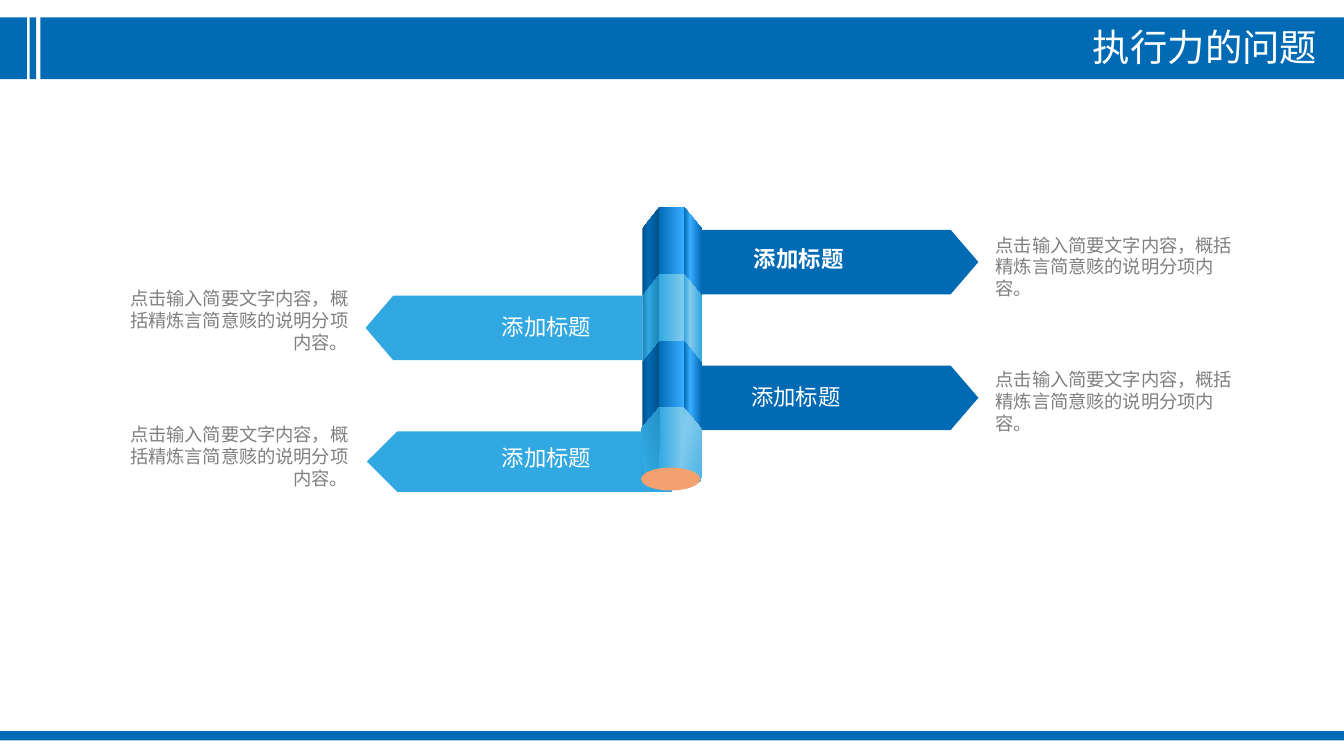
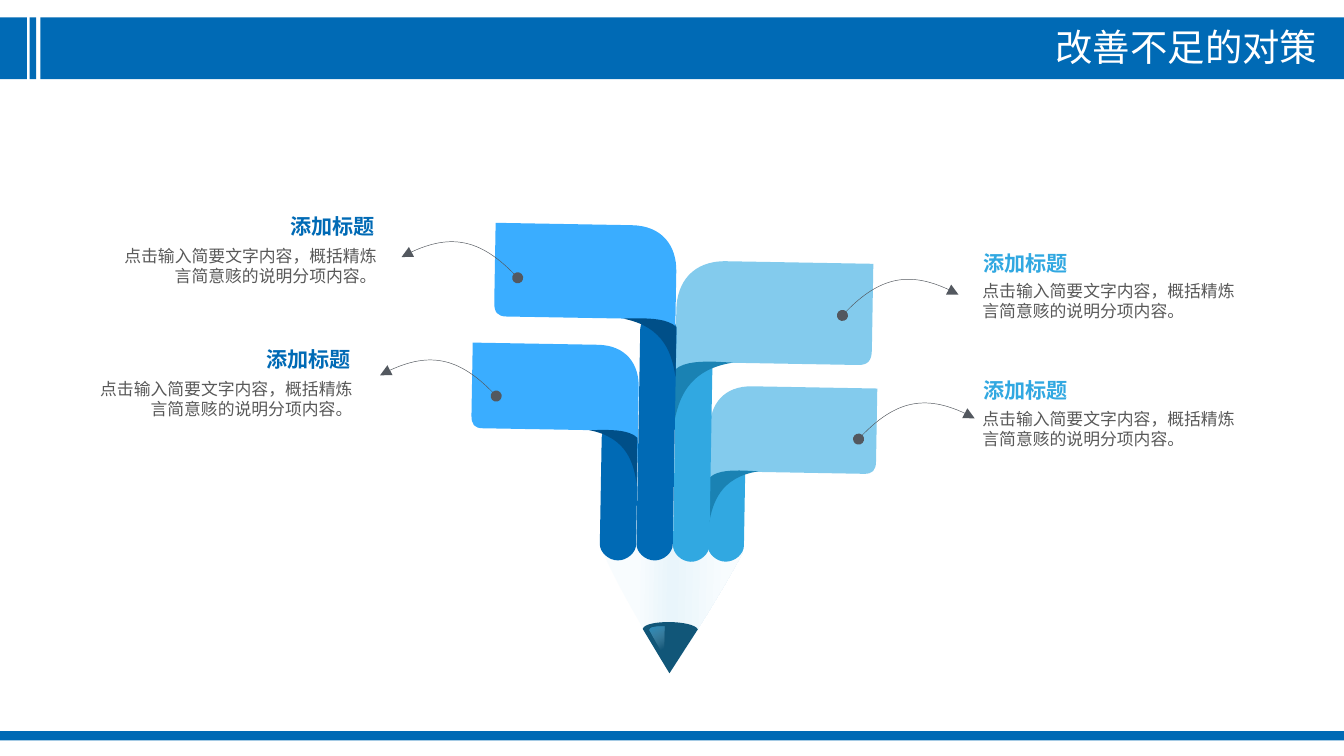
from dataclasses import dataclass

from lxml import etree
from pptx import Presentation
from pptx.dml.color import RGBColor
from pptx.enum.shapes import MSO_SHAPE
from pptx.enum.text import MSO_ANCHOR, MSO_AUTO_SIZE, PP_ALIGN
from pptx.oxml.ns import qn
from pptx.util import Inches, Pt

RECTANGLE, OVAL = MSO_SHAPE.RECTANGLE, MSO_SHAPE.OVAL
LEFT, RIGHT = PP_ALIGN.LEFT, PP_ALIGN.RIGHT
TOP, MIDDLE = MSO_ANCHOR.TOP, MSO_ANCHOR.MIDDLE
FIT_TEXT, FIXED = MSO_AUTO_SIZE.SHAPE_TO_FIT_TEXT, MSO_AUTO_SIZE.NONE


@dataclass(frozen=True)
class Theme:
    font: str = "Arial"
    white: str = "FFFFFF"
    navy: str = "004F88"
    blue: str = "006AB5"
    bright: str = "3AADFF"
    teal: str = "1A82B3"
    sky: str = "31A8E1"
    pale: str = "83CBED"
    wood: str = "F2A16F"
    lead: str = "115678"
    paper: str = "F8FCFE"
    paper_shade: str = "E9F5FB"
    glint: str = "D6EEF9"
    grey: str = "808080"
    dark_grey: str = "595959"
    pointer: str = "53585F"
    title_size: float = 20
    banner_size: float = 12
    heading_size: float = 11.25
    note_size: float = 9.75
    detail_size: float = 9


THEME = Theme()
HEADING = "添加标题"
DETAIL = "点击输入简要文字内容，概括精炼言简意赅的说明分项内容。"
NARROW = (0.07, 0.04, 0.07, 0.04)
NO_INSETS = (0, 0, 0, 0)

BANNER = "M 0 0 L 90 0 L 100 50 L 90 100 L 0 100 Z"
PILLAR_FACE = "M 0 0 L 100 0 L 100 100 L 0 100 Z"
PILLAR_SIDE = "M 100 0 L 100 75 L 0 100 L 0 24 Z"
PILLAR_FOOT = "M 100 0 L 46 94 C 40 97 32 99 24 100 C 13 100 8 97 0 94 L 39 22 Z"
PILLAR_RIM = "M 0 0 L 100 0 C 84 60 66 100 50 100 C 34 100 16 60 0 0 Z"
PENCIL_CONE = "M 100 10 C 83 46 50 100 50 100 C 50 100 13 42 0 9 C 0 9 66 -12 100 10 Z"
PENCIL_LEAD = "M 0 14 C 27 61 50 100 50 100 C 50 100 71 63 100 13 C 92 -5 4 -5 0 14 Z"
PENCIL_GLINT = "M 100 100 C 100 100 55 64 0 14 C 0 0 55 0 100 0 Z"
FLAG = ("M 25 0 C 8 0 0 16 0 36 L 0 100 C 2 91 12 74 29 74 "
        "L 93 74 C 98 74 100 71 100 63 L 100 0 Z")
FOLD = "M 0 14 L 0 100 C 7 64 20 14 100 1 L 69 0 C 48 0 16 0 0 14 Z"
POINTER = "M 0 0 C 58 4 90 36 100 100"


def inches(box):
    return [Inches(length) for length in box]


def paint(shape, fill, angle=0):
    shape.shadow.inherit = False
    shape.line.fill.background()
    if fill is None:
        shape.fill.background()
    elif isinstance(fill, str):
        shape.fill.solid()
        shape.fill.fore_color.rgb = RGBColor.from_string(fill)
    else:
        shape.fill.gradient()
        shape.fill.gradient_angle = -angle % 360
        stops = shape.element.spPr.find(qn("a:gradFill")).find(qn("a:gsLst"))
        for stop in list(stops):
            stops.remove(stop)
        for position, color, *alpha in fill:
            stop = etree.SubElement(stops, qn("a:gs"), pos=str(position * 1000))
            tint = etree.SubElement(stop, qn("a:srgbClr"), val=color)
            for percent in alpha:
                etree.SubElement(tint, qn("a:alpha"), val=str(percent * 1000))


def block(shapes, kind, box, fill):
    paint(shapes.add_shape(kind, *inches(box)), fill)


def trace(shapes, outline, box, fill=None, turn=0, flip=False, angle=0):
    left, top, width, height = box
    numbers, curves = [], []
    for token in outline.split():
        if token == "C":
            curves.append(len(numbers) // 2)
        elif not token.isalpha():
            numbers.append(float(token))
    points = [
        (Inches(left + width * (100 - x if flip else x) / 100),
         Inches(top + height * y / 100))
        for x, y in zip(numbers[::2], numbers[1::2])
    ]
    builder = shapes.build_freeform(*points[0])
    builder.add_line_segments(points[1:], close=outline.endswith("Z"))
    shape = builder.convert_to_shape()
    steps = list(next(shape.element.iter(qn("a:path"))))
    for start in curves:
        curve = etree.Element(qn("a:cubicBezTo"))
        steps[start].addprevious(curve)
        for step in steps[start:start + 3]:
            curve.append(step[0])
            step.getparent().remove(step)
    shape.rotation = turn
    paint(shape, fill, angle)
    return shape


def write(shapes, text, box, *, size, color, bold=False, align=LEFT, anchor=TOP,
          insets=(0.1, 0.05, 0.1, 0.05), fit=FIXED, spacing=None, before=None):
    text_box = shapes.add_textbox(*inches(box))
    frame = text_box.text_frame
    frame.word_wrap = True
    frame.auto_size = fit
    frame.vertical_anchor = anchor
    (frame.margin_left, frame.margin_top,
     frame.margin_right, frame.margin_bottom) = inches(insets)
    paragraph = frame.paragraphs[0]
    paragraph.alignment = align
    next(text_box.element.iter(qn("a:pPr"))).set("hangingPunct", "0")
    if spacing:
        paragraph.line_spacing = spacing
    if before:
        paragraph.space_before = Pt(before)
    run = paragraph.add_run()
    run.text = text
    run.font.name = THEME.font
    run.font.size = Pt(size)
    run.font.bold = bold
    run.font.color.rgb = RGBColor.from_string(color)


def titled_slide(deck, title):
    shapes = deck.slides.add_slide(deck.slide_layouts[6]).shapes
    for left, width in ((0.3, 9.7), (0, 0.2), (0.22, 0.05)):
        block(shapes, RECTANGLE, (left, 0.13, width, 0.46), THEME.blue)
    block(shapes, RECTANGLE, (0, 5.44, 10, 0.07), THEME.blue)
    write(shapes, title, (5.63, 0.13, 4.27, 0.44), size=THEME.title_size,
          color=THEME.white, align=RIGHT, fit=FIT_TEXT)
    return shapes


def banner(shapes, box, label_at, to_left=False, bold=False):
    group = shapes.add_group_shape().shapes
    trace(group, BANNER, box, THEME.sky if to_left else THEME.blue, flip=to_left)
    write(group, HEADING, (*label_at, 1.74, 0.27), size=THEME.banner_size,
          color=THEME.white, bold=bold, align=RIGHT if to_left else LEFT,
          insets=NARROW, spacing=0.9, before=10)


def pillar(shapes):
    group = shapes.add_group_shape().shapes
    blues = (THEME.navy, THEME.blue, THEME.bright)
    skies = (THEME.teal, THEME.sky, THEME.pale)

    def ridge(edge, middle):
        return [(0, edge), (35, middle), (100, edge)]

    def face(top, middle, light):
        trace(group, PILLAR_FACE, (4.9, top, 0.19, 0.5), [(0, middle), (100, light)])

    for level, (dark, middle, light) in enumerate((blues, skies, blues)):
        top = 1.54 + 0.5 * level
        trace(group, PILLAR_SIDE, (4.78, top, 0.13, 0.67), ridge(dark, middle))
        face(top, middle, light)
        trace(group, PILLAR_SIDE, (5.09, top, 0.13, 0.67), ridge(middle, light), flip=True)
    dark, middle, light = skies
    face(3.03, middle, light)
    trace(group, PILLAR_RIM, (4.9, 3.54, 0.19, 0.04), dark)
    trace(group, PILLAR_FOOT, (4.7, 3.06, 0.29, 0.52), ridge(dark, middle), turn=342.7)
    trace(group, PILLAR_FOOT, (5, 3.06, 0.29, 0.52), ridge(middle, light),
          turn=17.3, flip=True)
    block(group, OVAL, (4.77, 3.48, 0.44, 0.17), THEME.wood)


def stem_outline(height):
    cap = 12 / height
    return (f"M 100 {100 - cap} C 100 {100 - cap / 2} 76 100 50 100 "
            f"C 24 100 0 {100 - cap / 2} 0 {100 - cap} L 0 {cap} "
            f"C 0 {cap / 2} 24 0 50 0 C 76 0 100 {cap / 2} 100 {cap} Z")


def pencil(shapes):
    group = shapes.add_group_shape().shapes
    trace(group, PENCIL_CONE, (4.47, 4, 1.05, 1),
          [(26, THEME.paper), (50, THEME.paper_shade), (88, THEME.paper)], turn=1)
    trace(group, PENCIL_LEAD, (4.78, 4.63, 0.41, 0.38), THEME.lead, turn=1)
    trace(group, PENCIL_GLINT, (4.83, 4.66, 0.11, 0.22),
          [(22, THEME.glint, 0), (100, THEME.sky, 64)], turn=1, angle=240)
    left_colors = (THEME.blue, THEME.bright, THEME.navy)
    right_colors = (THEME.sky, THEME.pale, THEME.teal)
    strips = (
        ((5.27, 3.42, 0.27, 0.76), (5.28, 2.88, 1.24, 0.86), (5.28, 3.5, 0.36, 0.39), False),
        ((5.02, 2.48, 0.27, 1.7), (5.03, 1.95, 1.46, 1.02), (5.02, 2.69, 0.43, 0.46), False),
        ((4.47, 3.14, 0.27, 1.03), (3.51, 2.56, 1.24, 0.86), (4.38, 3.2, 0.36, 0.39), True),
        ((4.75, 2.33, 0.27, 1.84), (3.68, 1.67, 1.35, 0.94), (4.63, 2.37, 0.4, 0.43), True),
    )
    for stem, flag, fold, to_left in strips:
        colors = left_colors if to_left else right_colors
        outlines = (stem_outline(stem[3]), FLAG, FOLD)
        for outline, box, color in zip(outlines, (stem, flag, fold), colors):
            trace(group, outline, box, color, turn=1, flip=to_left)


def pointer(shapes, left, top, to_left):
    arc = trace(shapes, POINTER, (left, top, 0.64, 0.6),
                turn=327 if to_left else 33, flip=not to_left)
    arc.line.color.rgb = RGBColor.from_string(THEME.pointer)
    arc.line.width = Pt(0.25)
    line = arc.element.spPr.find(qn("a:ln"))
    etree.SubElement(line, qn("a:headEnd"), type="triangle")
    etree.SubElement(line, qn("a:tailEnd"), type="oval")


def callout(shapes, heading_at, detail_at, to_left):
    group = shapes.add_group_shape().shapes
    align = RIGHT if to_left else LEFT
    write(group, HEADING, (*heading_at, 1.65, 0.21), size=THEME.heading_size,
          color=THEME.blue if to_left else THEME.sky, bold=True, align=align,
          anchor=MIDDLE, insets=NARROW)
    write(group, DETAIL, (*detail_at, 1.94, 0.3), size=THEME.detail_size,
          color=THEME.dark_grey, align=align, insets=NO_INSETS, fit=FIT_TEXT)


def problems_slide(deck):
    shapes = titled_slide(deck, "执行力的问题")
    banner(shapes, (2.73, 3.21, 2.27, 0.45), (2.73, 3.29), to_left=True)
    pillar(shapes)
    banner(shapes, (5.22, 1.71, 2.06, 0.48), (5.54, 1.81), bold=True)
    banner(shapes, (2.72, 2.2, 2.06, 0.48), (2.73, 2.31), to_left=True)
    banner(shapes, (5.22, 2.72, 2.06, 0.48), (5.52, 2.83))
    for left, top, width, height, align in (
        (7.41, 1.74, 1.82, 0.33, LEFT), (7.41, 2.74, 1.82, 0.49, LEFT),
        (0.86, 2.14, 1.73, 0.49, RIGHT), (0.86, 3.15, 1.73, 0.49, RIGHT),
    ):
        write(shapes, DETAIL, (left, top, width, height), size=THEME.note_size,
              color=THEME.grey, align=align, insets=NO_INSETS, fit=FIT_TEXT)


def measures_slide(deck):
    shapes = titled_slide(deck, "改善不足的对策")
    pencil(shapes)
    for left, top, to_left in (
        (3.1, 1.69, True), (6.38, 1.97, False), (6.5, 2.89, False), (2.94, 2.57, True),
    ):
        pointer(shapes, left, top, to_left)
    for heading_at, detail_at, to_left in (
        ((7.25, 1.85), (7.31, 2.09), False),
        ((7.25, 2.8), (7.31, 3.04), False),
        ((1.03, 2.57), (0.68, 2.82), True),
        ((1.21, 1.58), (0.86, 1.83), True),
    ):
        callout(shapes, heading_at, detail_at, to_left)


def main():
    deck = Presentation()
    deck.slide_width = Inches(10)
    deck.slide_height = Inches(10 * 9 / 16)
    problems_slide(deck)
    measures_slide(deck)
    deck.save("out.pptx")


if __name__ == "__main__":
    main()
